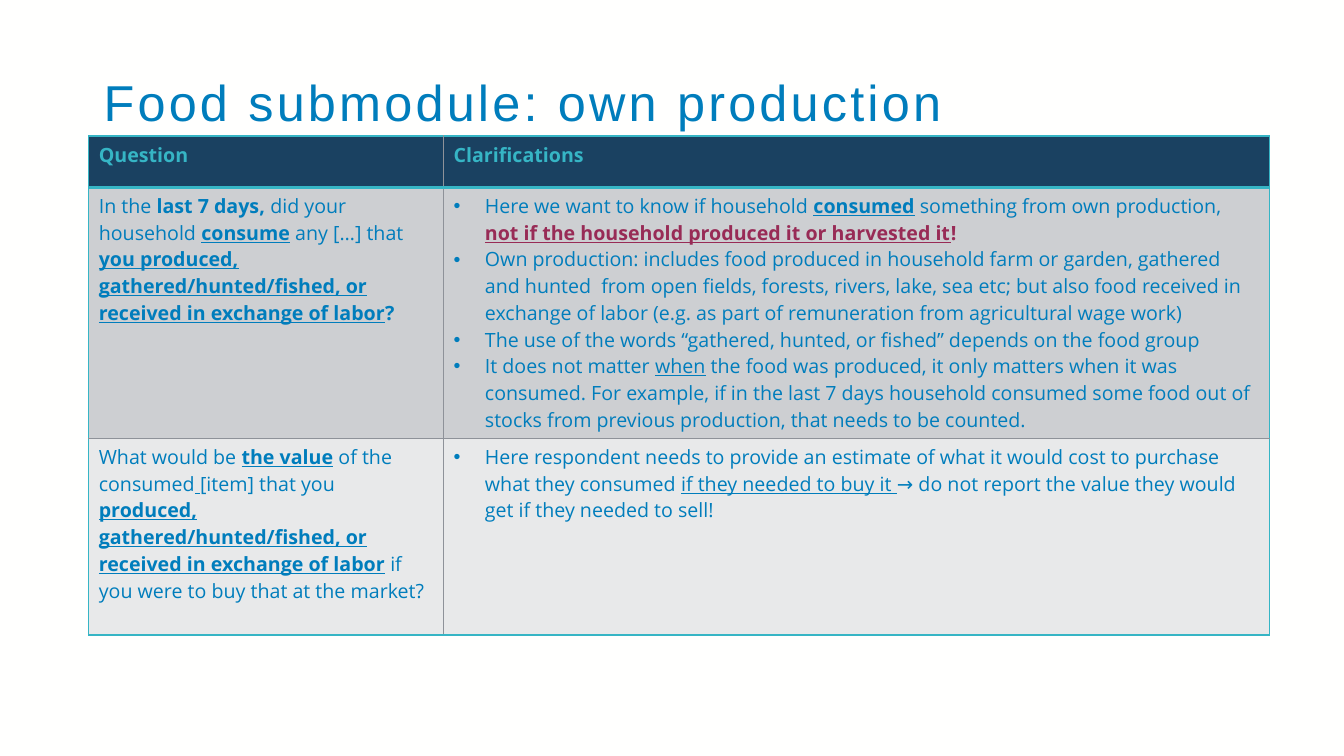
"""Builds the slide on own production in the food submodule."""
from dataclasses import dataclass

from lxml import etree
from pptx import Presentation
from pptx import util as u
from pptx.dml.color import RGBColor
from pptx.enum import text
from pptx.oxml.ns import qn


@dataclass(frozen=True)
class Theme:
    """Colours, fonts and type sizes."""
    back: str = "FFFFFE"
    blue: str = "007DBC"
    teal: str = "36B5C5"
    navy: str = "1A4161"
    wine: str = "982B56"
    rule: str = "8E9299"
    dark: str = "CDCFD2"
    light: str = "E8E9EA"
    head: str = "Arial"
    body: str = "Open Sans"
    big: float = 36
    small: float = 14


class Deck:
    """Holds the theme and the current slide."""

    def __init__(self, theme):
        """Open a file with one blank slide."""
        self.theme = theme
        self.file = Presentation()
        self.file.slide_width = u.Inches(13.33)
        self.file.slide_height = u.Inches(7.5)
        self.slide = self.file.slides.add_slide(self.file.slide_layouts[6])
        fill = self.slide.background.fill
        fill.solid()
        fill.fore_color.rgb = RGBColor.from_string(theme.back)

    def run(self, para, words, color, **form):
        """Add one run with its format."""
        run = para.add_run()
        run.text = words
        for name, value in form.items():
            setattr(run.font, name, value)
        run.font.color.rgb = RGBColor.from_string(color)
        return run

    def title(self, words, box):
        """Add the spaced title."""
        th = self.theme
        frame = self.slide.shapes.add_textbox(*map(u.Inches, box)).text_frame
        form = {"word_wrap": True, "vertical_anchor": text.MSO_ANCHOR.TOP}
        for name, value in form.items():
            setattr(frame, name, value)
        para = frame.paragraphs[0]
        para.line_spacing = 0.9
        run = self.run(para, words, th.blue, name=th.head, size=u.Pt(th.big))
        run.font._element.set("spc", "230")

    def bullet(self, para):
        """Give a paragraph a hanging bullet."""
        props = para._p.get_or_add_pPr()
        props.set("marL", str(u.Inches(0.31)))
        props.set("indent", str(u.Inches(-0.31)))
        etree.SubElement(props, qn("a:buFont"), typeface="Arial")
        etree.SubElement(props, qn("a:buChar"), char="•")

    def edge(self, cell, sides):
        """Draw the borders of a cell."""
        props = cell._tc.get_or_add_tcPr()
        for spot, (side, (color, width)) in enumerate(sides.items()):
            line = etree.Element(qn("a:ln" + side), w=str(u.Pt(width)))
            fill = etree.SubElement(line, qn("a:solidFill"))
            etree.SubElement(fill, qn("a:srgbClr"), val=color)
            props.insert(spot, line)

    def cell(self, cell, paras, color, fill, marks):
        """Fill a cell; run marks are b bold, u underlined, w wine."""
        th = self.theme
        cell.fill.solid()
        cell.fill.fore_color.rgb = RGBColor.from_string(fill)
        for spot, runs in enumerate(paras):
            frame = cell.text_frame
            para = frame.add_paragraph() if spot else frame.paragraphs[0]
            if marks:
                self.bullet(para)
            for words, form in runs:
                tint = th.wine if "w" in form else color
                self.run(para, words, tint, name=th.body, size=u.Pt(th.small),
                         bold="b" in form, underline="u" in form)

    def table(self, rows, spot, wide, high):
        """Add the table of questions and clarifications."""
        th = self.theme
        size = (sum(wide), sum(high))
        grid = self.slide.shapes.add_table(
            len(high), len(wide), *map(u.Inches, spot + size)).table
        for name in ("first_row", "horz_banding"):
            setattr(grid, name, False)
        for col, width in zip(grid.columns, wide):
            col.width = u.Inches(width)
        for row, height in zip(grid.rows, high):
            row.height = u.Inches(height)
        fills = (th.navy, th.dark, th.light)
        outer, inner, thick = (th.teal, 1), (th.rule, 1), (th.teal, 3)
        last = len(high) - 1
        for r, row in enumerate(rows):
            flat = (outer if r == 0 else thick if r == 1 else inner,
                    thick if r == 0 else outer if r == last else inner)
            for c, paras in enumerate(row):
                cell = grid.cell(r, c)
                color = th.blue if r else th.teal
                self.cell(cell, paras, color, fills[r], r > 0 and c == 1)
                self.edge(cell, {"L": inner if c else outer,
                                 "R": outer if c else inner,
                                 "T": flat[0], "B": flat[1]})


ROWS = [
    [[[("Question", "b")]], [[("Clarifications", "b")]]],
    [
        [[("In the ", ""), ("last 7 days,", "b"),
          (" did your household ", ""), ("consume", "bu"),
          (" any […] that ", ""),
          ("you produced, gathered/hunted/fished, or received in exchange "
           "of labor", "bu"), ("?", "b")]],
        [[("Here we want to know if household ", ""), ("consumed", "bu"),
          (" ", "b"), ("something from own production, ", ""),
          ("not if the household produced it or harvested it", "buw"),
          ("!", "bw")],
         [("Own production: includes food produced in household farm or "
           "garden, gathered and hunted  from open fields, forests, rivers, "
           "lake, sea etc; but also food received in exchange of labor (e.g. "
           "as part of remuneration from agricultural wage work)", "")],
         [("The use of the words “gathered, hunted, or fished” depends on "
           "the food group", "")],
         [("It does not matter ", ""), ("when", "u"),
          (" the food was produced, it only matters when it was consumed. "
           "For example, if in the last 7 days household consumed some food "
           "out of stocks from previous production, that needs to be "
           "counted.", "")]],
    ],
    [
        [[("What would be ", ""), ("the value", "bu"),
          (" of the consumed", ""), (" ", "bu"), ("[item] that you ", ""),
          ("produced, gathered/hunted/fished, or received in exchange of "
           "labor", "bu"),
          (" if you were to buy that at the market?", "")]],
        [[("Here respondent needs to provide an estimate of what it would "
           "cost to purchase what they consumed ", ""),
          ("if they needed to buy it ", "u"),
          ("→ do not report the value they would get if they needed to "
           "sell!", "")]],
    ],
]


def main():
    """Build and save the slide."""
    deck = Deck(Theme())
    deck.title("Food submodule: own production", (0.93, 0.72, 11.53, 1.26))
    deck.table(ROWS, (0.88, 1.35), (3.52, 8.19), (0.51, 2.49, 1.95))
    deck.file.save("out.pptx")


if __name__ == "__main__":
    main()
